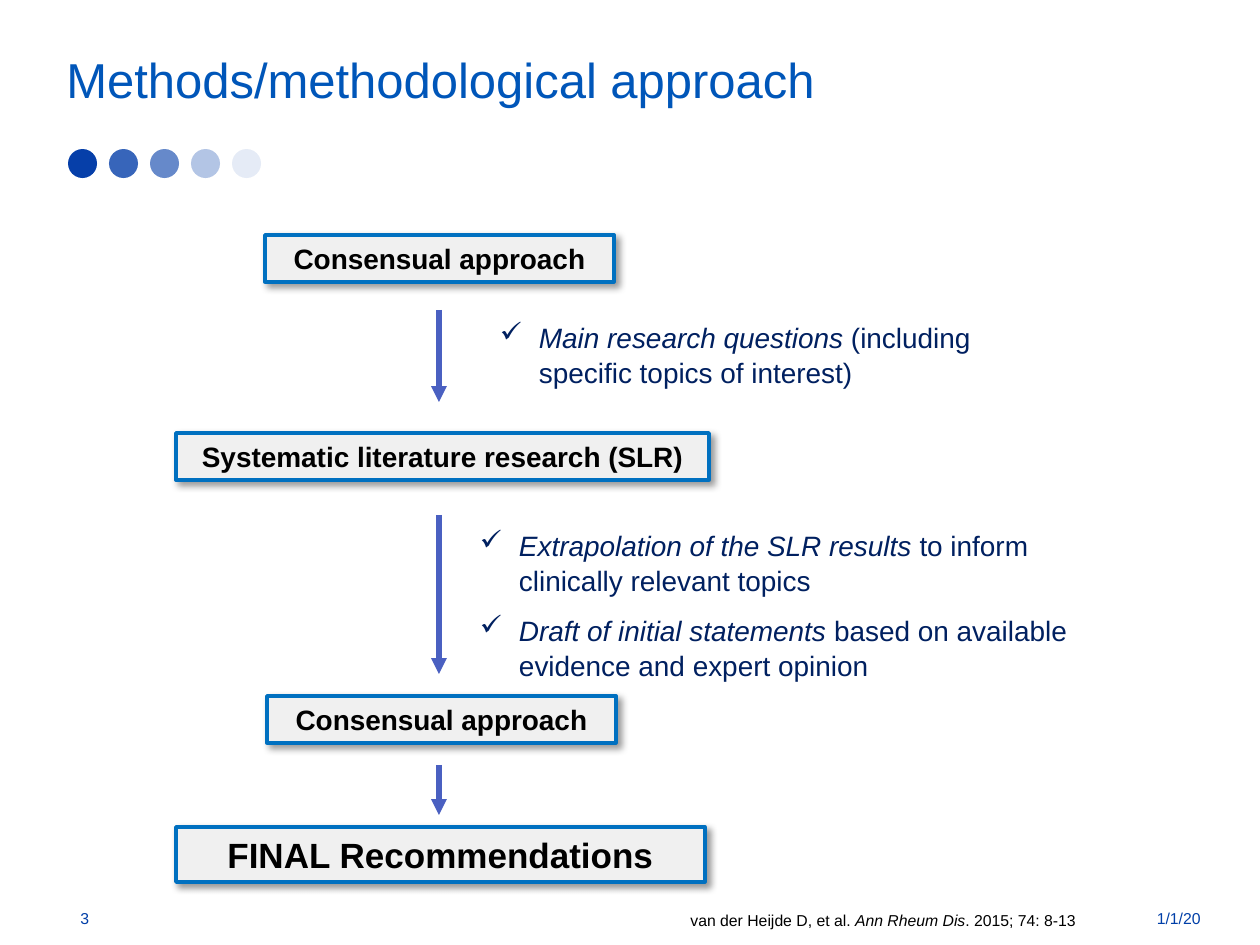
from lxml.etree import SubElement
from pptx import Presentation
from pptx.dml.color import RGBColor
from pptx.enum.shapes import MSO_CONNECTOR as Connector, MSO_SHAPE as Shape
from pptx.enum.text import MSO_ANCHOR as Anchor, PP_ALIGN as Align
from pptx.oxml.ns import qn
from pptx.util import Pt

PX = 914400 / 126


def px(*lengths):
    return [round(length * PX) for length in lengths]


def write(box, paragraphs, size, color, bold=False, align=Align.LEFT,
          anchor=Anchor.TOP, inset=None, bullet=None, spacing=None, before=0):
    frame = box.text_frame
    frame.word_wrap = True
    frame.vertical_anchor = anchor
    if inset is not None:
        frame.margin_left, frame.margin_top, frame.margin_right, frame.margin_bottom = px(*[inset] * 4)
    for index, spans in enumerate(paragraphs):
        para = frame.add_paragraph() if index else frame.paragraphs[0]
        para.alignment = align
        if spacing:
            para.line_spacing = spacing
        if index:
            para.space_before = Pt(before)
        if bullet:
            properties = para._p.get_or_add_pPr()
            indent = px(39)[0]
            properties.set("marL", str(indent))
            properties.set("indent", str(-indent))
            SubElement(properties, qn("a:buChar"), char=bullet)
        for words, italic in spans:
            span = para.add_run()
            span.text = words
            span.font.name = "Arial"
            span.font.size = Pt(size)
            span.font.bold = bold
            span.font.italic = italic
            span.font.color.rgb = RGBColor.from_string(color)


deck = Presentation()
deck.slide_width, deck.slide_height = px(1260, 945)
page = deck.slides.add_slide(deck.slide_layouts[6])
shapes = page.shapes

for index, opacity in enumerate([100, 80, 61, 30, 10]):
    dot = shapes.add_shape(Shape.OVAL, *px(68 + 41 * index, 149, 29, 29))
    dot.shadow.inherit = False
    dot.fill.solid()
    dot.fill.fore_color.rgb = RGBColor.from_string("063FA9")
    dot.line.fill.background()
    if opacity < 100:
        shade = dot._element.spPr.find(".//" + qn("a:srgbClr"))
        SubElement(shade, qn("a:alpha"), val=str(opacity * 1000))

title = shapes.add_textbox(*px(54, 39, 1148, 87))
write(title, [[("Methods/methodological approach", False)]], 28, "0056B9",
      anchor=Anchor.MIDDLE, spacing=0.9)

number = shapes.add_textbox(*px(68, 893, 121, 50))
write(number, [[("3", False)]], 9, "003FA8", anchor=Anchor.MIDDLE)
date = shapes.add_textbox(*px(1045, 893, 168, 50))
write(date, [[("1/1/20", False)]], 9, "003FA8", align=Align.RIGHT, anchor=Anchor.MIDDLE)
citation = shapes.add_textbox(*px(190, 905, 898, 32))
write(citation, [[("van der Heijde D, et al. ", False), ("Ann Rheum Dis", True),
                  (". 2015; 74: 8-13", False)]], 9, "000000", align=Align.RIGHT)

steps = [
    ("Consensual approach", 265, 235, 349, 47, 16),
    ("Systematic literature research (SLR)", 176, 433, 533, 47, 16),
    ("Consensual approach", 267, 696, 349, 47, 16),
    ("FINAL Recommendations", 176, 827, 529, 55, 20),
]
for words, left, top, width, height, size in steps:
    step = shapes.add_shape(Shape.RECTANGLE, *px(left, top, width, height))
    step.fill.solid()
    step.fill.fore_color.rgb = RGBColor.from_string("F0F0F0")
    step.line.color.rgb = RGBColor.from_string("0070C0")
    step.line.width = Pt(2)
    step.shadow.inherit = False
    effects = step._element.spPr.find(qn("a:effectLst"))
    shadow = SubElement(effects, qn("a:outerShdw"), blurRad=str(Pt(4)), dist=str(Pt(3)),
                        dir="2700000", algn="tl", rotWithShape="0")
    shade = SubElement(shadow, qn("a:srgbClr"), val="000000")
    SubElement(shade, qn("a:alpha"), val="40000")
    write(step, [[(words, False)]], size, "000000", bold=True,
          align=Align.CENTER, anchor=Anchor.MIDDLE)

notes = [
    ((495, 314, 554, 78), [
        [("Main research questions ", True), ("(including specific topics of interest)", False)],
    ]),
    ((475, 522, 600, 163), [
        [("Extrapolation of the SLR results ", True), ("to inform clinically relevant topics", False)],
        [("Draft of initial statements ", True),
         ("based on available evidence and expert opinion", False)],
    ]),
]
for place, paragraphs in notes:
    note = shapes.add_textbox(*px(*place))
    write(note, paragraphs, 16, "002060", inset=5, bullet="✓", spacing=1.05, before=8)

for top, bottom in [(310, 402), (515, 674), (765, 815)]:
    arrow = shapes.add_connector(Connector.STRAIGHT, *px(439, top, 439, bottom))
    arrow.line.color.rgb = RGBColor.from_string("4A60C1")
    arrow.line.width = Pt(3)
    SubElement(arrow.line._get_or_add_ln(), qn("a:tailEnd"), type="triangle")
    SubElement(arrow._element.spPr, qn("a:effectLst"))

deck.save("out.pptx")
